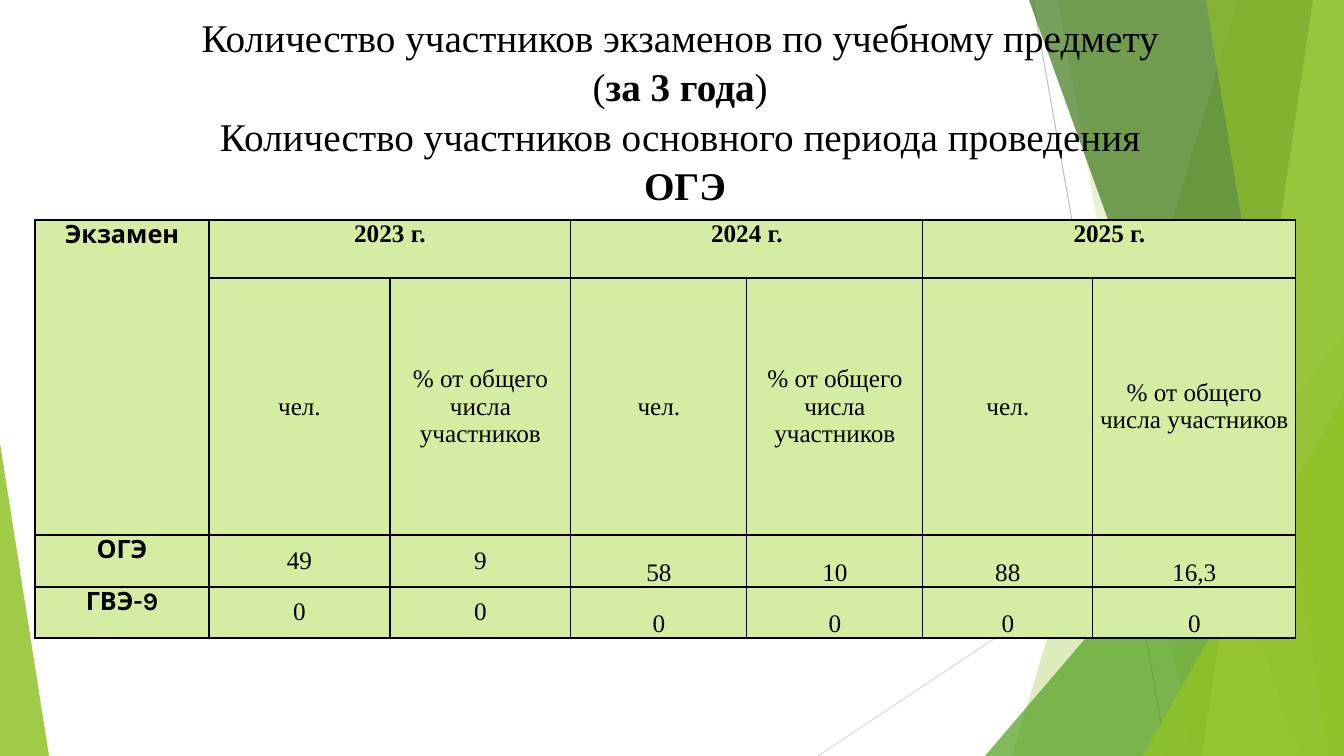
from pptx import Presentation
from pptx.dml.color import RGBColor
from pptx.enum.shapes import MSO_CONNECTOR, MSO_SHAPE
from pptx.enum.text import MSO_ANCHOR, PP_ALIGN
from pptx.oxml.ns import qn
from pptx.util import Emu, Pt
from lxml.etree import SubElement

SCALE = 914400 / 100.8
WIDTH, HEIGHT = 1344, 756

BLACK = RGBColor(0x00, 0x00, 0x00)
GREY = RGBColor(0xBF, 0xBF, 0xBF)
LIGHT_GREY = RGBColor(0xD9, 0xD9, 0xD9)
GREEN = RGBColor(0x90, 0xC2, 0x26)
MID_GREEN = RGBColor(0x54, 0xA0, 0x21)
DARK_GREEN = RGBColor(0x3F, 0x78, 0x19)
LIME = RGBColor(0xC0, 0xE4, 0x74)
CELL_GREEN = RGBColor(0xD5, 0xED, 0xA2)

SERIF = "Times New Roman"
LABEL_FONT = "Karla"


def px(length):
    return Emu(round(length * SCALE))


def add_run(para, text, size, font, bold):
    span = para.add_run()
    span.text = text
    for name, value in {"size": Pt(size), "name": font, "bold": bold}.items():
        setattr(span.font, name, value)
    span.font.color.rgb = BLACK


deck = Presentation()
deck.slide_width, deck.slide_height = px(WIDTH), px(HEIGHT)
page = deck.slides.add_slide(deck.slide_layouts[6])

for ends, color in [((1033, 0, 1167, 756), GREY), ((1344, 406, 818, 756), LIGHT_GREY)]:
    line = page.shapes.add_connector(MSO_CONNECTOR.STRAIGHT, *map(px, ends))
    line.line.color.rgb = color
    line.line.width = Pt(0.75)
    SubElement(line.element.spPr, qn("a:effectLst"))

facets = [
    ("band", (1238, 1012), GREEN, 30),
    ("band", (1058, 1192), GREEN, 20),
    ("triangle", (985, 336, 359, 420, 1), MID_GREEN, 72),
    ("band", (1029, 1301), DARK_GREEN, 70),
    ("band", (1313, 1202), LIME, 70),
    ("band", (1206, 1329), GREEN, 65),
    ("triangle", (1143, 396, 201, 360, 1), GREEN, 80),
    ("triangle", (0, 443, 49, 313, 0), GREEN, 85),
]
for kind, geometry, color, opacity in facets:
    if kind == "band":
        top_x, bottom_x = geometry
        outline = page.shapes.build_freeform(top_x, 0, scale=SCALE)
        outline.add_line_segments([(WIDTH, 0), (WIDTH, HEIGHT), (bottom_x, HEIGHT)], close=True)
        facet = outline.convert_to_shape()
    else:
        *frame, apex = geometry
        facet = page.shapes.add_shape(MSO_SHAPE.ISOSCELES_TRIANGLE, *map(px, frame))
        facet.adjustments[0] = apex
    facet.shadow.inherit = False
    facet.line.fill.background()
    facet.fill.solid()
    facet.fill.fore_color.rgb = color
    tint = facet.element.spPr.find(qn("a:solidFill")).find(qn("a:srgbClr"))
    SubElement(tint, qn("a:alpha"), val=str(opacity * 1000))

columns = [174, 181, 181, 176, 176, 170, 203]
rows = [58, 257, 52, 51]
subheads = ["чел.", "% от общего числа участников"]
content = [
    ["Экзамен", "2023 г.", "", "2024 г.", "", "2025 г.", ""],
    ["", *subheads * 3],
    ["ОГЭ", "49", "9", "58", "10", "88", "16,3"],
    ["ГВЭ-9", "0", "0", "0", "0", "0", "0"],
]
table = page.shapes.add_table(
    len(rows), len(columns), px(35), px(220), px(sum(columns)), px(sum(rows))
).table
table.first_row = table.horz_banding = False
for column, width in zip(table.columns, columns):
    column.width = px(width)
for row, height in zip(table.rows, rows):
    row.height = px(height)

for row_index, texts in enumerate(content):
    for column_index, text in enumerate(texts):
        cell = table.cell(row_index, column_index)
        is_label = column_index == 0
        if is_label or row_index == 0:
            anchor = MSO_ANCHOR.TOP
        elif row_index > 1 and column_index > 2:
            anchor = MSO_ANCHOR.BOTTOM
        else:
            anchor = MSO_ANCHOR.MIDDLE
        side = px(6 if is_label else 7)
        cell_format = {
            "margin_left": side,
            "margin_right": side,
            "margin_top": 0,
            "margin_bottom": 0,
            "vertical_anchor": anchor,
        }
        for name, value in cell_format.items():
            setattr(cell, name, value)
        properties = cell._tc.get_or_add_tcPr()
        for edge in ("lnL", "lnR", "lnT", "lnB"):
            border = SubElement(properties, qn(f"a:{edge}"), w=str(Pt(1)))
            paint = SubElement(border, qn("a:solidFill"))
            SubElement(paint, qn("a:srgbClr"), val=str(BLACK))
        cell.fill.solid()
        cell.fill.fore_color.rgb = CELL_GREEN
        if text:
            para = cell.text_frame.paragraphs[0]
            para.alignment = PP_ALIGN.CENTER
            add_run(para, text, 18, LABEL_FONT if is_label else SERIF, is_label or row_index == 0)

table.cell(0, 0).merge(table.cell(1, 0))
for first in (1, 3, 5):
    table.cell(0, first).merge(table.cell(0, first + 1))

box = page.shapes.add_textbox(px(130), px(6), px(1110), px(248))
box.text_frame.word_wrap = True
title_lines = [
    [("Количество участников экзаменов по учебному предмету ", False)],
    [("(", False), ("за 3\u00a0года".replace("\u00a0", " "), True), (") ", False)],
    [("Количество участников основного периода проведения ", False)],
    [("ОГЭ", True)],
]
for index, spans in enumerate(title_lines):
    para = box.text_frame.paragraphs[0] if index == 0 else box.text_frame.add_paragraph()
    para.alignment = PP_ALIGN.CENTER
    para.line_spacing = 1.05
    for text, bold in spans:
        add_run(para, text, 28, SERIF, bold)

deck.save("out.pptx")
